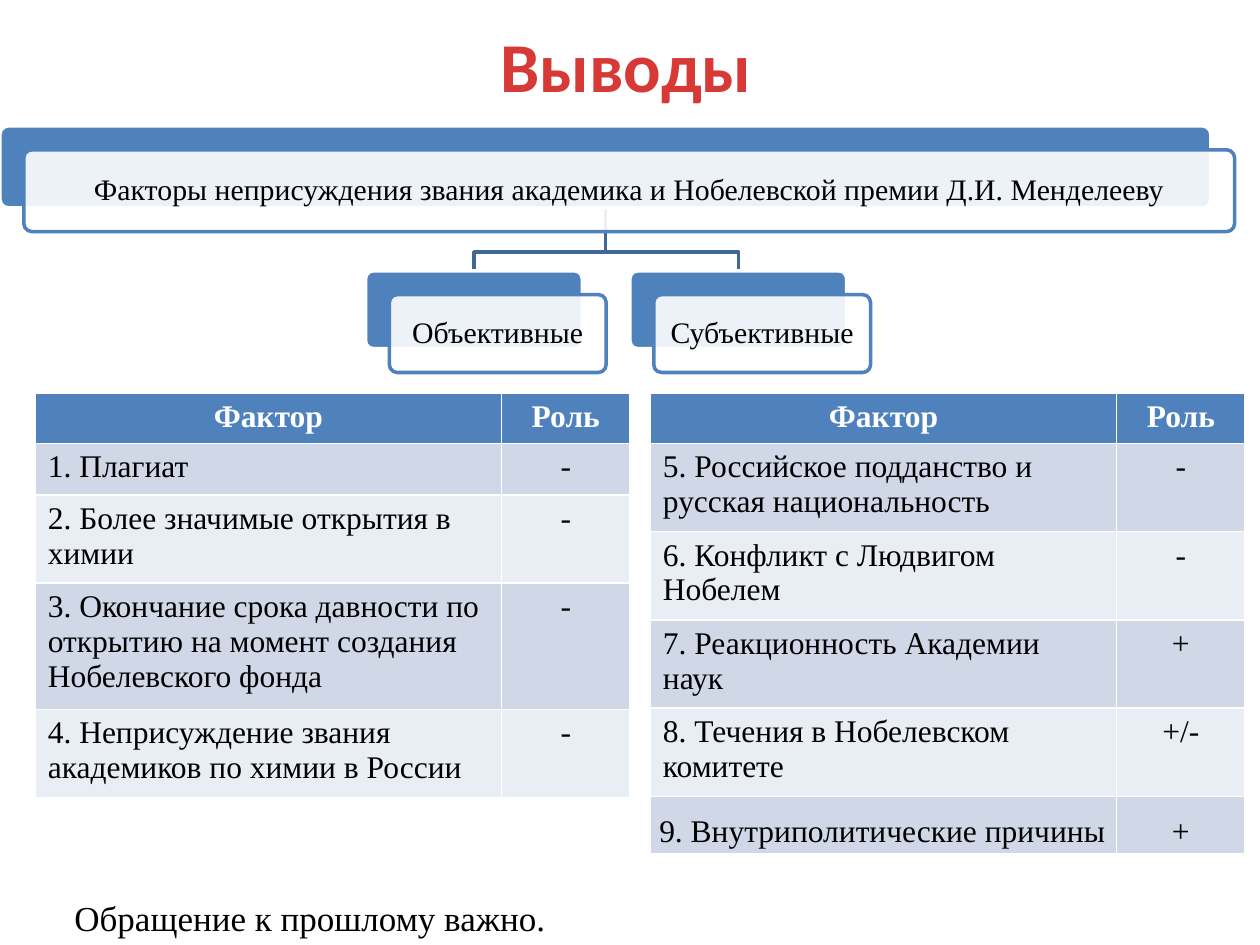
from dataclasses import dataclass

from lxml import etree
from pptx import Presentation
from pptx.dml.color import RGBColor
from pptx.enum.shapes import MSO_SHAPE
from pptx.enum.text import MSO_ANCHOR, PP_ALIGN
from pptx.oxml.ns import qn
from pptx.util import Cm, Pt

ROUND = MSO_SHAPE.ROUNDED_RECTANGLE
MIDDLE = MSO_ANCHOR.MIDDLE
LEFT, CENTER, FULL = PP_ALIGN.LEFT, PP_ALIGN.CENTER, PP_ALIGN.JUSTIFY
BLUE = RGBColor(0x4F, 0x81, 0xBD)
NAVY = RGBColor(0x3F, 0x67, 0x97)
DARK = RGBColor(0xD0, 0xD8, 0xE8)
PALE = RGBColor(0xE9, 0xED, 0xF4)
RED = RGBColor(0xD7, 0x3A, 0x36)
WHITE = RGBColor(0xFF, 0xFF, 0xFF)
BLACK = RGBColor(0, 0, 0)
SERIF = "Times New Roman"
INSET = Cm(0.18)


@dataclass
class Card:
    text: str
    left: float
    top: float
    width: float
    height: float

    @property
    def mid(self) -> float:
        return self.left + self.width / 2


@dataclass
class Row:
    factor: str
    role: str
    height: float
    tight: bool = False


ROOT = Card("Факторы неприсуждения звания академика и Нобелевской премии "
            "Д.И. Менделееву", 0, 2.54, 24.41, 1.65)
KIDS = [Card("Объективные", 7.37, 5.46, 4.37, 1.57),
        Card("Субъективные", 12.7, 5.46, 4.37, 1.57)]

FIRST = [
    Row("1. Плагиат", "-", 1.04),
    Row("2. Более значимые открытия в химии", "-", 1.78),
    Row("3. Окончание срока давности по открытию на момент создания "
        "Нобелевского фонда", "-", 2.54),
    Row("4. Неприсуждение звания академиков по химии в России", "-", 1.78),
]
SECOND = [
    Row("5. Российское подданство и русская национальность", "-", 1.78),
    Row("6. Конфликт с Людвигом Нобелем", "-", 1.78),
    Row("7. Реакционность Академии наук", "+", 1.78),
    Row("8. Течения в Нобелевском комитете", "+/-", 1.78),
    Row("9. Внутриполитические причины", "+", 1.14, True),
]


def write(frame, text: str, size: float, align=CENTER, color=BLACK,
          bold=False, font=SERIF):
    para = frame.paragraphs[0]
    para.alignment = align
    run = para.add_run()
    run.text = text
    run.font.name = font
    run.font.size = Pt(size)
    run.font.bold = bold
    run.font.color.rgb = color
    return para


def add_text(slide, left: float, top: float, width: float, height: float):
    frame = slide.shapes.add_textbox(
        Cm(left), Cm(top), Cm(width), Cm(height)).text_frame
    frame.word_wrap = True
    return frame


def add_panel(slide, card: Card, shift: float, fill, line):
    panel = slide.shapes.add_shape(
        ROUND, Cm(card.left + shift), Cm(card.top + shift),
        Cm(card.width), Cm(card.height))
    panel.adjustments[0] = 0.1
    panel.shadow.inherit = False
    panel.fill.solid()
    panel.fill.fore_color.rgb = fill
    panel.line.color.rgb = line
    panel.line.width = Pt(2)
    return panel


def add_card(slide, card: Card) -> None:
    add_panel(slide, card, 0, BLUE, WHITE)
    front = add_panel(slide, card, 0.48, WHITE, BLUE)
    tint = front.fill._xPr.find(qn("a:solidFill"))[0]
    etree.SubElement(tint, qn("a:alpha")).set("val", "90000")
    frame = front.text_frame
    frame.word_wrap = True
    frame.vertical_anchor = MIDDLE
    frame.margin_left = frame.margin_right = INSET
    frame.margin_top = frame.margin_bottom = INSET
    write(frame, card.text, 17).line_spacing = 0.9


def add_branch(slide, root: Card, kid: Card) -> None:
    bend = kid.top - 0.38
    start = root.top + root.height
    path = slide.shapes.build_freeform(Cm(root.mid), Cm(start))
    path.add_line_segments(
        [(Cm(root.mid), Cm(bend)), (Cm(kid.mid), Cm(bend)),
         (Cm(kid.mid), Cm(kid.top))], close=False)
    branch = path.convert_to_shape()
    branch.shadow.inherit = False
    branch.fill.background()
    branch.line.color.rgb = NAVY
    branch.line.width = Pt(2)


def fill_cell(cell, text: str, fill, align, color=BLACK, bold=False,
              tight=False) -> None:
    cell.fill.solid()
    cell.fill.fore_color.rgb = fill
    para = write(cell.text_frame, text, 18, align, color, bold)
    if tight:
        cell.margin_left = cell.margin_right = INSET
        cell.margin_top = cell.margin_bottom = 0
        para.line_spacing = 1.5


def add_grid(slide, left: float, rows: list[Row]) -> None:
    head = 0.97
    total = head + sum(row.height for row in rows)
    grid = slide.shapes.add_table(
        len(rows) + 1, 2, Cm(left), Cm(7.92), Cm(11.99), Cm(total)).table
    grid.columns[0].width = Cm(9.4)
    grid.columns[1].width = Cm(2.59)
    grid.rows[0].height = Cm(head)
    for col, label in enumerate(("Фактор", "Роль")):
        fill_cell(grid.cell(0, col), label, BLUE, CENTER, WHITE, True)
    for num, row in enumerate(rows, 1):
        grid.rows[num].height = Cm(row.height)
        fill = DARK if num % 2 else PALE
        side = FULL if row.tight else LEFT
        fill_cell(grid.cell(num, 0), row.factor, fill, side, tight=row.tight)
        fill_cell(grid.cell(num, 1), row.role, fill, CENTER, tight=row.tight)


def main() -> None:
    deck = Presentation()
    deck.slide_width = Cm(25.4)
    deck.slide_height = Cm(19.05)
    slide = deck.slides.add_slide(deck.slide_layouts[6])

    title = add_text(slide, 0.3, 0.33, 24.64, 1.96)
    write(title, "Выводы", 40, color=RED, bold=True, font="Calibri")

    for kid in KIDS:
        add_branch(slide, ROOT, kid)
    for card in (ROOT, *KIDS):
        add_card(slide, card)
    add_grid(slide, 0.71, FIRST)
    add_grid(slide, 13.11, SECOND)

    note = add_text(slide, 0, 17.93, 25.4, 1.12)
    note.vertical_anchor = MIDDLE
    para = write(note, "Обращение к прошлому важно.", 20, FULL)
    para._p.get_or_add_pPr().set("indent", str(Cm(1.25)))

    deck.save("out.pptx")


if __name__ == "__main__":
    main()
